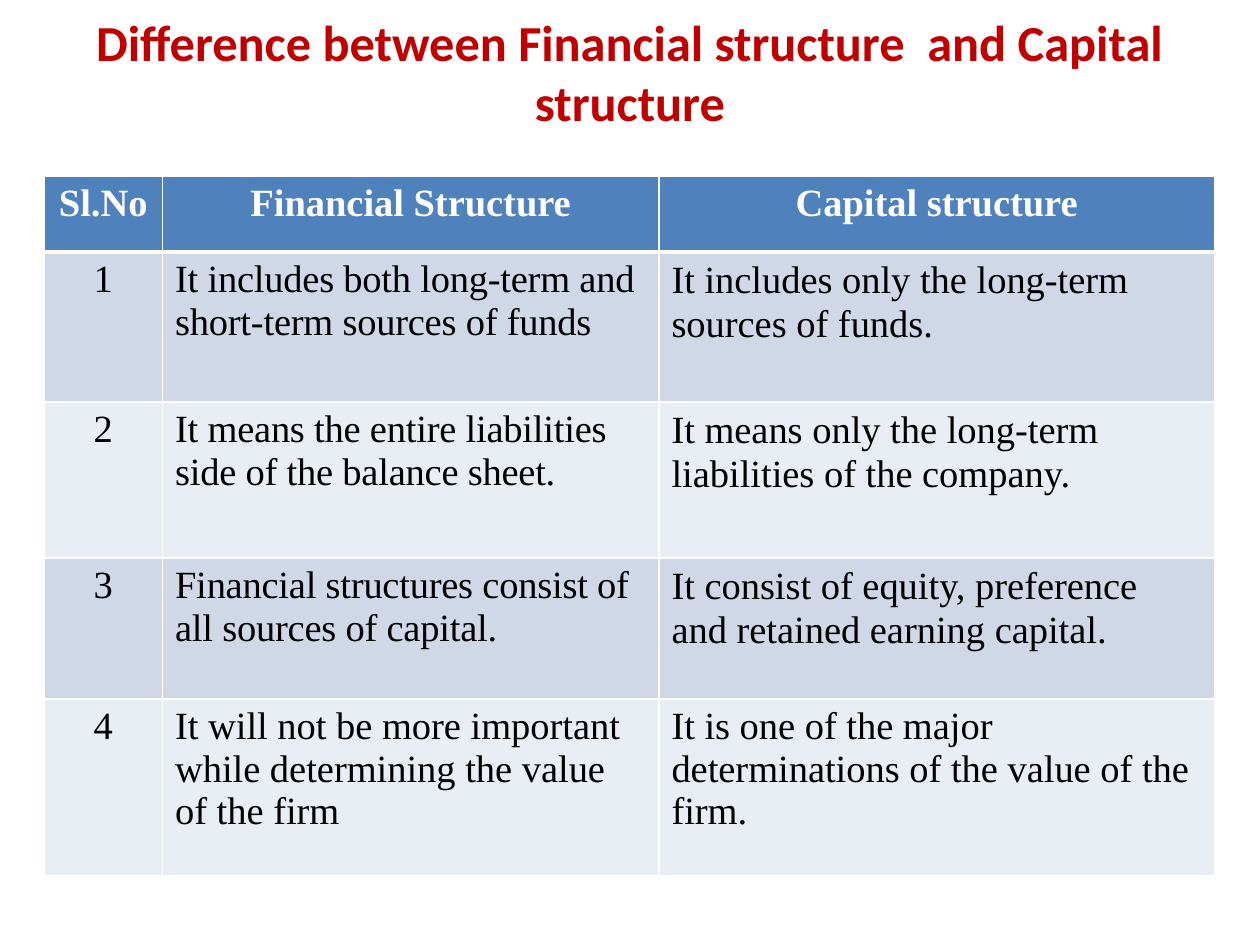
from lxml.etree import SubElement
from pptx import Presentation
from pptx.dml.color import RGBColor
from pptx.enum.text import MSO_ANCHOR, PP_ALIGN
from pptx.oxml.ns import qn
from pptx.util import Inches, Pt

COLORS = {
    "title": "C00000",
    "header": "4F81BD",
    "odd": "D0D8E8",
    "even": "E9EDF4",
    "border": "FFFFFF",
    "header_text": "FFFFFF",
    "body_text": "000000",
}
TITLE = "Difference between Financial structure  and Capital structure"
HEADINGS = ["Sl.No", "Financial Structure", "Capital structure"]
DIFFERENCES = [
    ("It includes both long-term and short-term sources of funds",
     "It includes only the long-term sources of funds."),
    ("It means the entire liabilities side of the balance sheet.",
     "It means only the long-term liabilities of the company."),
    ("Financial structures consist of all sources of capital.",
     "It consist of equity, preference and retained earning capital."),
    ("It will not be more important while determining the value of the firm",
     "It is one of the major determinations of the value of the firm."),
]
COLUMN_WIDTHS = [0.94, 3.94, 4.41]
ROW_HEIGHTS = [0.6, 1.19, 1.24, 1.12, 1.4]
SPACE_BEFORE = [0, 2.5, 0.1, 0.1, 0]


def rgb(name):
    return RGBColor.from_string(COLORS[name])


def add_run(paragraph, text, font, size, color, bold):
    run = paragraph.add_run()
    run.text = text
    run.font.name = font
    run.font.size = Pt(size)
    run.font.bold = bold
    run.font.color.rgb = rgb(color)
    return run


def set_borders(cell, bottom_width):
    """Give the cell white edges; they must precede the fill in tcPr."""
    properties = cell._tc.get_or_add_tcPr()
    for edge in ("lnL", "lnR", "lnT", "lnB"):
        width = bottom_width if edge == "lnB" else 1
        line = SubElement(properties, qn(f"a:{edge}"), w=str(Pt(width)))
        fill = SubElement(line, qn("a:solidFill"))
        SubElement(fill, qn("a:srgbClr"), val=COLORS["border"])


def fill_cell(cell, text, row, column):
    is_header = row == 0
    set_borders(cell, 3 if is_header else 1)
    cell.fill.solid()
    cell.fill.fore_color.rgb = rgb(
        "header" if is_header else "odd" if row % 2 else "even")
    paragraph = cell.text_frame.paragraphs[0]
    run = add_run(paragraph, text, "Times New Roman", 22,
                  "header_text" if is_header else "body_text", is_header)
    if is_header or column == 0:
        paragraph.alignment = PP_ALIGN.CENTER
        return
    paragraph.alignment = PP_ALIGN.LEFT
    paragraph.space_before = Pt(SPACE_BEFORE[row])
    if row < 4:
        if column == 1:
            run.font._element.set("spc", "-10")
        else:
            paragraph.line_spacing = 1.03


def place_title(slide, left, top, width, height):
    title = slide.shapes.title
    title.left, title.top, title.width, title.height = left, top, width, height
    frame = title.text_frame
    frame.word_wrap = True
    frame.vertical_anchor = MSO_ANCHOR.MIDDLE
    heading = frame.paragraphs[0]
    heading.alignment = PP_ALIGN.CENTER
    heading.font.size = Pt(28.8)
    add_run(heading, TITLE, "Calibri", 28.8, "title", True)
    heading.add_line_break()


def add_comparison(slide, left, top, width, height):
    rows = [HEADINGS] + [(str(number), *pair)
                         for number, pair in enumerate(DIFFERENCES, 1)]
    table = slide.shapes.add_table(
        len(rows), len(HEADINGS), left, top, width, height).table
    for column, column_width in zip(table.columns, COLUMN_WIDTHS):
        column.width = Inches(column_width)
    for r, texts in enumerate(rows):
        table.rows[r].height = Inches(ROW_HEIGHTS[r])
        for c, text in enumerate(texts):
            fill_cell(table.cell(r, c), text, r, c)


def main():
    deck = Presentation()
    deck.slide_width, deck.slide_height = Inches(10), Inches(7.5)
    slide = deck.slides.add_slide(deck.slide_layouts[5])
    place_title(slide, Inches(0.5), Inches(0.3), Inches(9), Inches(1.01))
    add_comparison(slide, Inches(0.35), Inches(1.4),
                   Inches(sum(COLUMN_WIDTHS)), Inches(sum(ROW_HEIGHTS)))
    deck.save("out.pptx")


if __name__ == "__main__":
    main()
